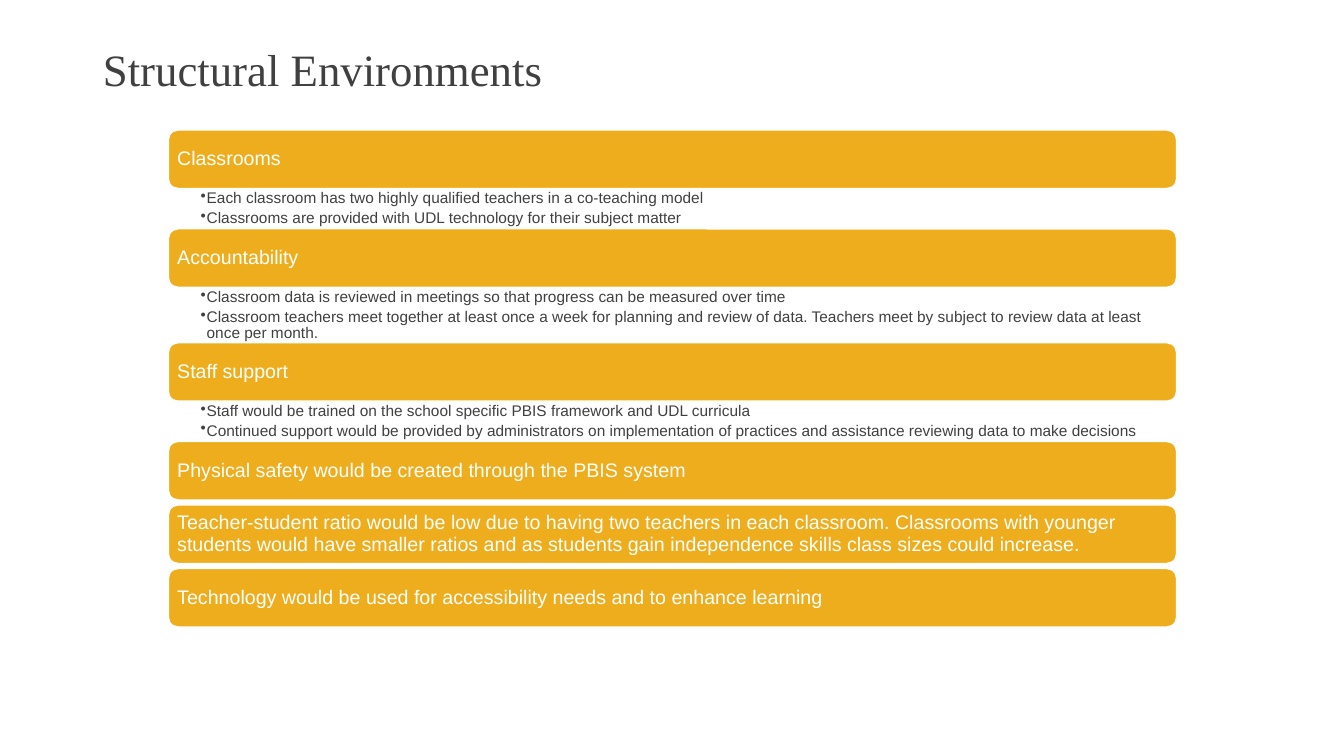
import pptx
import pptx.util
import pptx.dml.color
import pptx.enum.shapes
import pptx.enum.text
import pptx.oxml.ns
import lxml.etree

Inches = pptx.util.Inches
Pt = pptx.util.Pt
PP_ALIGN = pptx.enum.text.PP_ALIGN
MSO_ANCHOR = pptx.enum.text.MSO_ANCHOR

SECTIONS = [
    ("Classrooms", 0.4, [
        "Each classroom has two highly qualified teachers in a co-teaching model",
        "Classrooms are provided with UDL technology for their subject matter",
    ]),
    ("Accountability", 0.55, [
        "Classroom data is reviewed in meetings so that progress can be measured over time",
        "Classroom teachers meet together at least once a week for planning and review of data. "
        "Teachers meet by subject to review data at least once per month.",
    ]),
    ("Staff support", 0.4, [
        "Staff would be trained on the school specific PBIS framework and UDL curricula",
        "Continued support would be provided by administrators on implementation of practices "
        "and assistance reviewing data to make decisions",
    ]),
    ("Physical safety would be created through the PBIS system", 0.05, []),
    ("Teacher-student ratio would be low due to having two teachers in each classroom. "
     "Classrooms with younger students would have smaller ratios and as students gain "
     "independence skills class sizes could increase.", 0.05, []),
    ("Technology would be used for accessibility needs and to enhance learning", 0.05, []),
]
LEFT, WIDTH, BAR_HEIGHT = 1.67, 10, 0.58


def color(value):
    return pptx.dml.color.RGBColor.from_string(value)


def format_text(frame, anchor, margins, font_name, size, font_color):
    frame.word_wrap = True
    frame.auto_size = pptx.enum.text.MSO_AUTO_SIZE.NONE
    frame.vertical_anchor = anchor
    frame.margin_left, frame.margin_top, frame.margin_right, frame.margin_bottom = map(Inches, margins)
    for paragraph in frame.paragraphs:
        paragraph.alignment = PP_ALIGN.LEFT
        paragraph.line_spacing = 0.9
        paragraph.font.name = font_name
        paragraph.font.size = Pt(size)
        paragraph.font.color.rgb = color(font_color)


presentation = pptx.Presentation()
presentation.slide_width = Inches(13.33)
presentation.slide_height = Inches(7.5)
slide = presentation.slides.add_slide(presentation.slide_layouts[5])

title = slide.shapes.title
title.left, title.top, title.width, title.height = map(Inches, (0.92, 0.4, 10.75, 0.6))
title.text_frame.text = "Structural Environments"
format_text(title.text_frame, MSO_ANCHOR.BOTTOM, (0.1, 0.05, 0.1, 0.05), "Times New Roman", 32, "404040")

top = 1.29
for heading, gap, details in SECTIONS:
    bar = slide.shapes.add_shape(
        pptx.enum.shapes.MSO_SHAPE.ROUNDED_RECTANGLE,
        Inches(LEFT), Inches(top), Inches(WIDTH), Inches(BAR_HEIGHT))
    bar.shadow.inherit = False
    bar.fill.solid()
    bar.fill.fore_color.rgb = color("EEAD1D")
    bar.line.color.rgb = color("FFFFFF")
    bar.line.width = Pt(1)
    bar.text_frame.text = heading
    format_text(bar.text_frame, MSO_ANCHOR.MIDDLE, (0.06, 0.06, 0.06, 0.06), "Arial", 14, "FFFFFF")
    top += BAR_HEIGHT

    if details:
        box = slide.shapes.add_textbox(Inches(LEFT), Inches(top), Inches(WIDTH), Inches(gap))
        box.text_frame.text = "\n".join(details)
        for paragraph in box.text_frame.paragraphs:
            paragraph.level = 1
            properties = paragraph._p.get_or_add_pPr()
            properties.set("marL", str(Inches(0.06)))
            properties.set("indent", str(-Inches(0.06)))
            bullet = lxml.etree.SubElement(properties, pptx.oxml.ns.qn("a:buChar"))
            bullet.set("char", "•")
            paragraph.space_after = Pt(2.2)
        format_text(box.text_frame, MSO_ANCHOR.TOP, (0.32, 0.02, 0.11, 0.02), "Arial", 11, "404040")
    top += gap

presentation.save("out.pptx")
